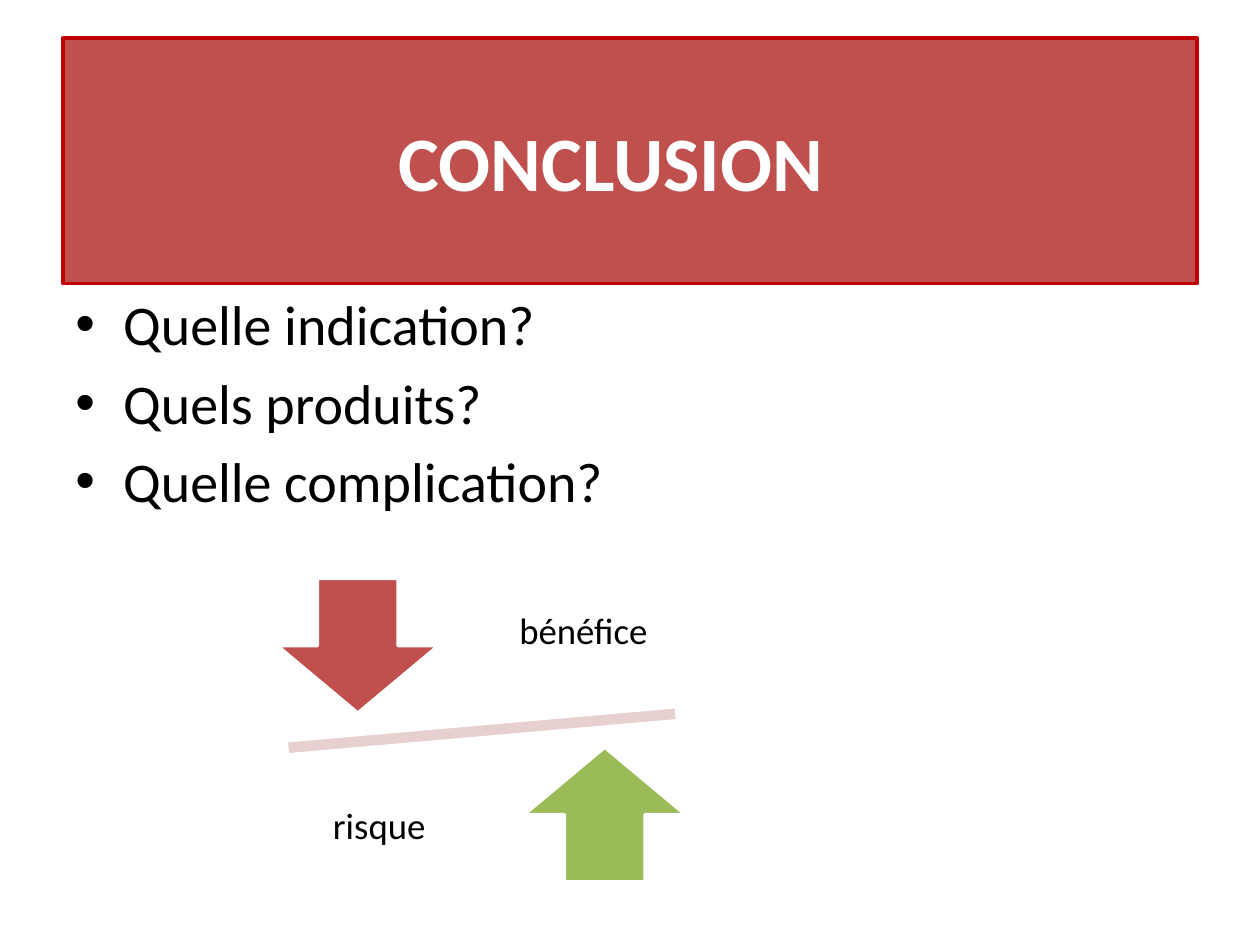
from pptx import Presentation
from pptx.dml.color import RGBColor
from pptx.enum.shapes import MSO_SHAPE as Shape
from pptx.enum.text import MSO_ANCHOR as Anchor, PP_ALIGN as Align
from pptx.oxml import parse_xml
from pptx.oxml.ns import nsdecls
from pptx.util import Inches, Pt

RED = RGBColor(0xC0, 0x50, 0x4D)
DARK = RGBColor(0xC0, 0x00, 0x00)
GREEN = RGBColor(0x9B, 0xBB, 0x59)
PINK = RGBColor(0xE8, 0xD0, 0xD0)
WHITE = RGBColor(0xFF, 0xFF, 0xFF)
BLACK = RGBColor(0x00, 0x00, 0x00)


def style(font, size, color, bold=False):
    """Set the face, size, colour and weight of a font."""
    font.name, font.size, font.bold = "Calibri", Pt(size), bold
    font.color.rgb = color


def paint(shape, fill, line):
    """Give a shape a solid fill and a two-point outline."""
    shape.fill.solid()
    shape.fill.fore_color.rgb = fill
    shape.line.color.rgb = line
    shape.line.width = Pt(2)


def add_title(slide, left, top, width, height, text):
    """Place the title banner in its box."""
    title = slide.shapes.title
    title.left, title.top = Inches(left), Inches(top)
    title.width, title.height = Inches(width), Inches(height)
    paint(title, RED, DARK)
    frame = title.text_frame
    frame.text = text
    frame.vertical_anchor = Anchor.MIDDLE
    frame.margin_right = Inches(0.4)
    para = frame.paragraphs[0]
    para.alignment = Align.CENTER
    style(para.runs[0].font, 44, WHITE, True)


def add_list(slide, left, top, width, height, items):
    """Place a bulleted list in its box."""
    box = slide.shapes.add_textbox(Inches(left), Inches(top), Inches(width), Inches(height))
    frame = box.text_frame
    frame.word_wrap = True
    frame.text = "\n".join(items)
    for i, para in enumerate(frame.paragraphs):
        props = para._p.get_or_add_pPr()
        props.set("marL", str(Inches(0.38)))
        props.set("indent", str(-Inches(0.38)))
        props.append(parse_xml(f'<a:buFont {nsdecls("a")} typeface="Arial"/>'))
        props.append(parse_xml(f'<a:buChar {nsdecls("a")} char="•"/>'))
        para.space_before = Pt(6.4 if i else 0)
        style(para.runs[0].font, 32, BLACK)


def add_part(slide, kind, left, top, width, height, fill):
    """Place one white-edged shape of the balance."""
    part = slide.shapes.add_shape(kind, Inches(left), Inches(top), Inches(width), Inches(height))
    part.shadow.inherit = False
    paint(part, fill, WHITE)
    return part


def add_label(slide, left, top, width, height, text):
    """Place a centred label in its box."""
    box = slide.shapes.add_textbox(Inches(left), Inches(top), Inches(width), Inches(height))
    frame = box.text_frame
    frame.word_wrap = True
    frame.vertical_anchor = Anchor.MIDDLE
    frame.margin_left = frame.margin_right = Inches(0.16)
    frame.margin_top = frame.margin_bottom = Inches(0.16)
    frame.text = text
    para = frame.paragraphs[0]
    para.alignment = Align.CENTER
    para.line_spacing = 0.9
    style(para.runs[0].font, 21, BLACK)


def add_scale(slide, left, top):
    """Place the tilted bar with its two arrows and labels."""
    bar = add_part(slide, Shape.MATH_MINUS, left, top + 1.1, 4.23, 0.48, PINK)
    bar.rotation = 355
    sides = [
        (Shape.DOWN_ARROW, 0.49, 0.13, RED, "bénéfice", 2.24, 0),
        (Shape.UP_ARROW, 2.45, 1.47, GREEN, "risque", 0.62, 1.55),
    ]
    for kind, x, y, fill, text, text_x, text_y in sides:
        add_part(slide, kind, left + x, top + y, 1.28, 1.07, fill)
        add_label(slide, left + text_x, top + text_y, 1.36, 1.12, text)


def main():
    """Build the slide and save it."""
    deck = Presentation()
    deck.slide_width, deck.slide_height = Inches(10), Inches(7.5)
    slide = deck.slides.add_slide(deck.slide_layouts[5])
    add_title(slide, 0.5, 0.3, 9, 1.95, "CONCLUSION")
    items = ["Quelle indication?", "Quels produits?", "Quelle complication?"]
    add_list(slide, 0.5, 2.25, 9, 4.45, items)
    add_scale(slide, 1.71, 4.46)
    deck.save("out.pptx")


if __name__ == "__main__":
    main()
